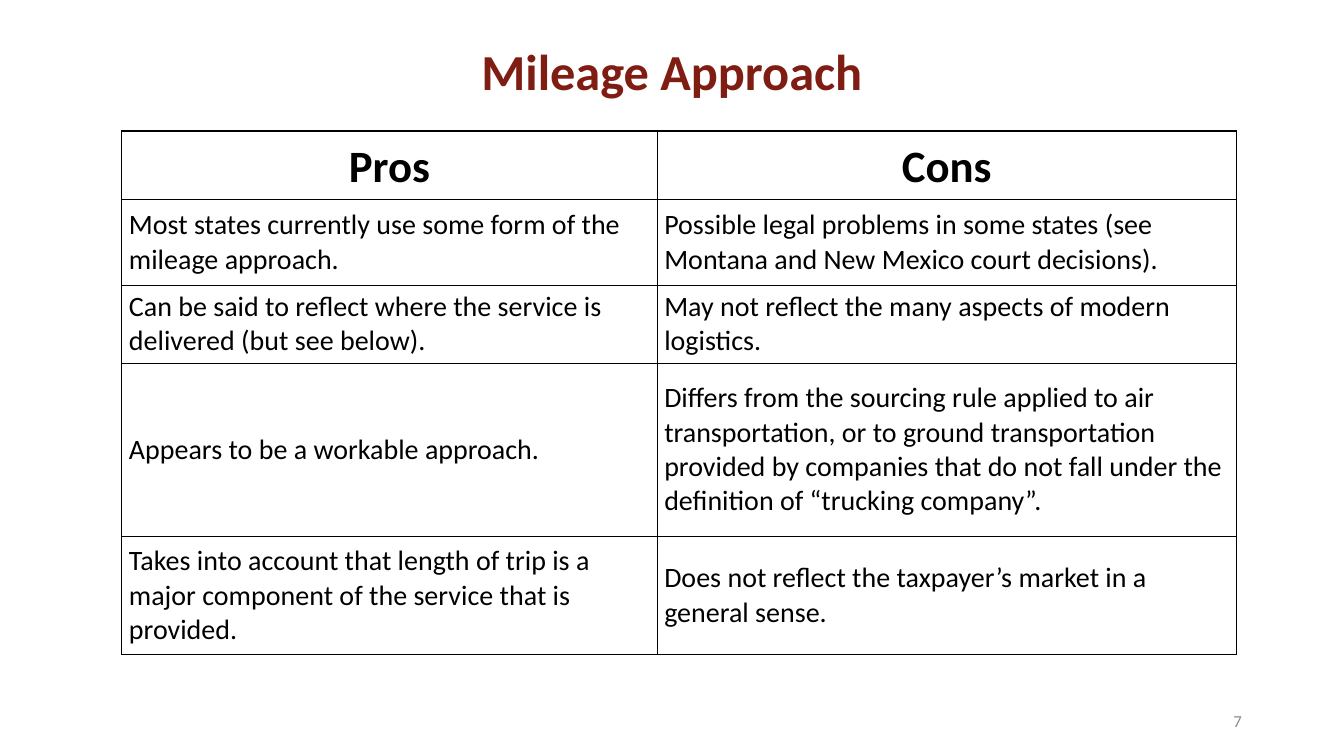
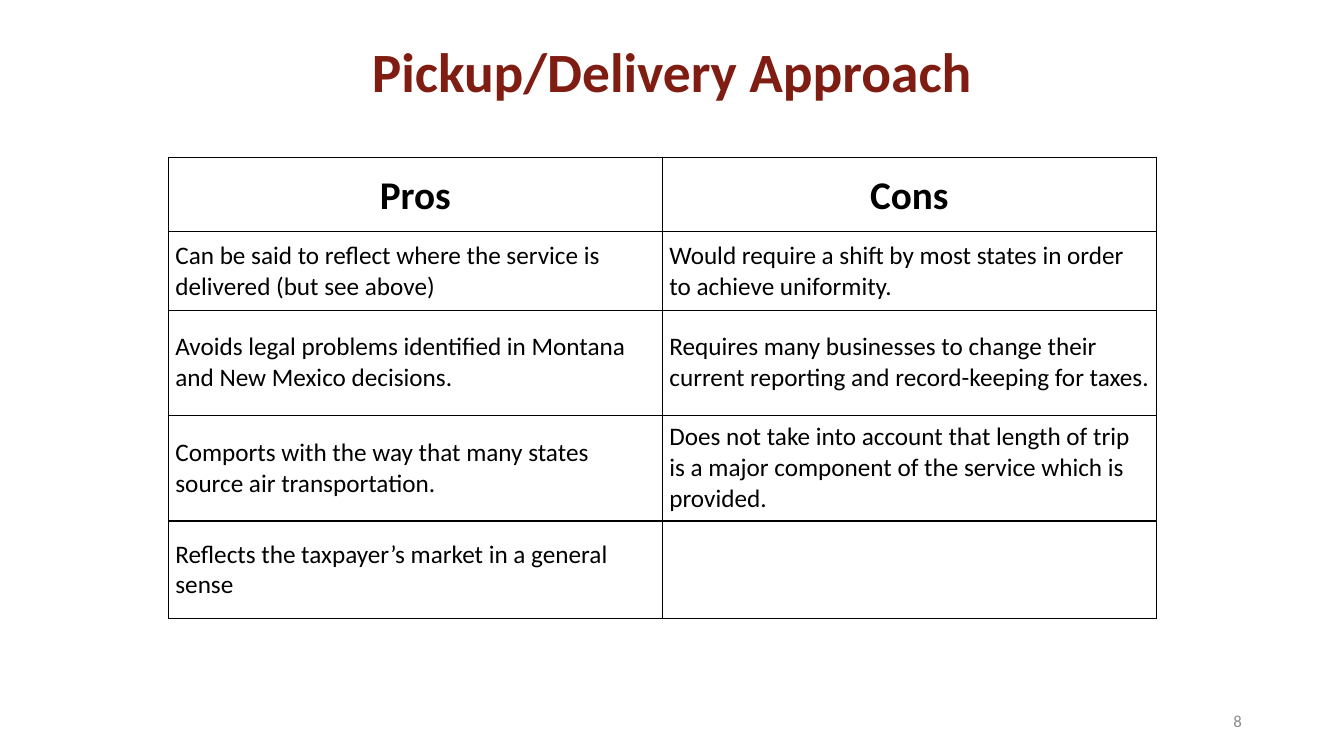
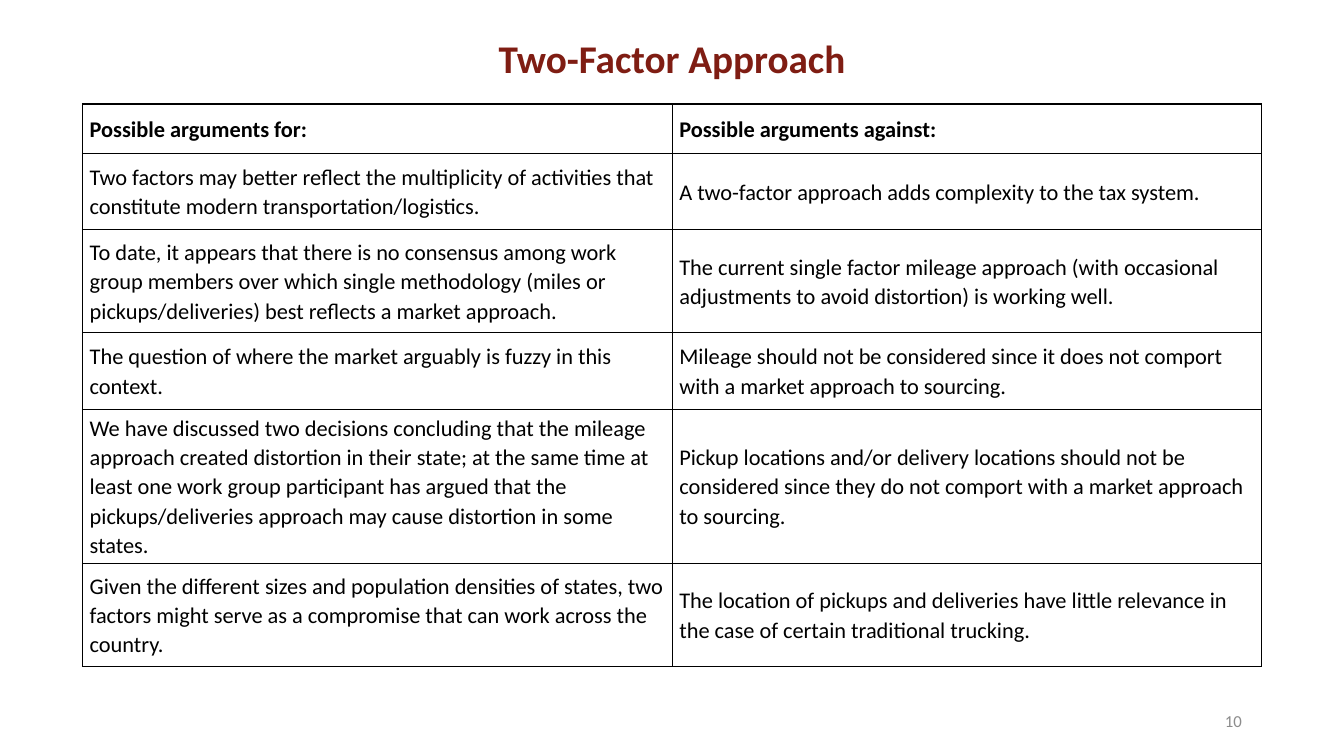
from dataclasses import dataclass

from lxml import etree
from pptx import Presentation
from pptx import util as u
from pptx.dml import color
from pptx.enum import text
from pptx.oxml import ns

Cm, Pt, Align = u.Cm, u.Pt, text.PP_ALIGN


@dataclass(frozen=True)
class Theme:
    font: str = "Calibri"
    brand: str = "7F1D13"
    ink: str = "000000"
    gray: str = "8C8C8C"
    small: float = 12
    lead: float = 1.07
    rule: float = 1
    wide: float = 33.87
    high: float = 19.05


class Deck:
    """Hold the theme, the file and the current slide."""

    def __init__(self, theme):
        self.theme = theme
        self.prs = Presentation()
        self.prs.slide_width = Cm(theme.wide)
        self.prs.slide_height = Cm(theme.high)

    def style(self, frame, size, tone, bold=False, align=Align.LEFT, lead=1.0):
        frame.word_wrap = True
        for para in frame.paragraphs:
            para.alignment = align
            para.line_spacing = lead
            for run in para.runs:
                font = run.font
                font.name, font.size, font.bold = self.theme.font, Pt(size), bold
                font.color.rgb = color.RGBColor.from_string(tone)

    def start(self, number):
        self.slide = self.prs.slides.add_slide(self.prs.slide_layouts[5])
        box = self.slide.shapes.add_textbox(Cm(23.93), Cm(17.65), Cm(7.62), Cm(1.02))
        frame = box.text_frame
        frame.text = str(number)
        frame.vertical_anchor = text.MSO_ANCHOR.MIDDLE
        self.style(frame, self.theme.small, self.theme.gray, align=Align.RIGHT)

    def title(self, words, size, top, high):
        head = self.slide.shapes.title
        head.left, head.top = Cm(0), Cm(top)
        head.width, head.height = Cm(self.theme.wide), Cm(high)
        frame = head.text_frame
        frame.text = words
        frame.auto_size = text.MSO_AUTO_SIZE.NONE
        frame.vertical_anchor = text.MSO_ANCHOR.MIDDLE
        self.style(frame, size, self.theme.brand, True, Align.CENTER, 0.9)

    def border(self, cell):
        props = cell._tc.get_or_add_tcPr()
        for side in "LRTB":
            line = etree.SubElement(props, ns.qn(f"a:ln{side}"), w=str(Pt(self.theme.rule)))
            fill = etree.SubElement(line, ns.qn("a:solidFill"))
            etree.SubElement(fill, ns.qn("a:srgbClr"), val=self.theme.ink)

    def table(self, left, top, cols, rows, cells, head, body, align, lead):
        frame = self.slide.shapes.add_table(
            len(rows), len(cols), Cm(left), Cm(top), Cm(sum(cols)), Cm(sum(rows)))
        grid = frame.table
        grid.first_row = grid.horz_banding = False
        for col, wide in zip(grid.columns, cols):
            col.width = Cm(wide)
        for row, high, line in zip(grid.rows, rows, cells):
            row.height = Cm(high)
            first = line is cells[0]
            for cell, words in zip(row.cells, line):
                cell.text = words
                cell.vertical_anchor = text.MSO_ANCHOR.MIDDLE
                cell.margin_left = cell.margin_right = Cm(0.18)
                cell.margin_top = cell.margin_bottom = 0
                self.border(cell)
                cell.fill.background()
                self.style(cell.text_frame, head if first else body, self.theme.ink, first,
                           align if first else Align.LEFT,
                           self.theme.lead if first else lead)


def main():
    theme = Theme()
    deck = Deck(theme)

    deck.start(7)
    deck.title("Mileage Approach", 36, 1.02, 1.68)
    deck.table(3.07, 3.3, [13.49, 14.6], [1.73, 2.16, 1.96, 4.37, 2.97], [
        ("Pros", "Cons"),
        ("Most states currently use some form of the mileage approach.",
         "Possible legal problems in some states (see Montana and New Mexico court decisions)."),
        ("Can be said to reflect where the service is delivered (but see below).",
         "May not reflect the many aspects of modern logistics."),
        ("Appears to be a workable approach.",
         "Differs from the sourcing rule applied to air transportation, or to ground "
         "transportation provided by companies that do not fall under the definition of "
         "“trucking company”."),
        ("Takes into account that length of trip is a major component of the service that "
         "is provided.",
         "Does not reflect the taxpayer’s market in a general sense."),
    ], 32, 20, Align.CENTER, 1.0)

    deck.start(8)
    deck.title("Pickup/Delivery Approach", 39.6, 1.02, 1.7)
    deck.table(4.24, 3.96, [12.45] * 2, [1.88, 1.98, 2.64, 2.67, 2.46], [
        ("Pros", "Cons"),
        ("Can be said to reflect where the service is delivered (but see above)",
         "Would require a shift by most states in order to achieve uniformity."),
        ("Avoids legal problems identified in Montana and New Mexico decisions.",
         "Requires many businesses to change their current reporting and record-keeping "
         "for taxes."),
        ("Comports with the way that many states source air transportation.",
         "Does not take into account that length of trip is a major component of the "
         "service which is provided."),
        ("Reflects the taxpayer’s market in a general sense", ""),
    ], 28, 18, Align.CENTER, 1.0)

    deck.start(10)
    deck.title("Two-Factor Approach", 28, 0.61, 1.85)
    deck.table(2.08, 2.62, [14.86] * 2, [1.24, 1.93, 2.59, 1.93, 3.89, 2.59], [
        ("Possible arguments for:", "Possible arguments against:"),
        ("Two factors may better reflect the multiplicity of activities that constitute "
         "modern transportation/logistics.",
         "A two-factor approach adds complexity to the tax system."),
        ("To date, it appears that there is no consensus among work group members over "
         "which single methodology (miles or pickups/deliveries) best reflects a market "
         "approach.",
         "The current single factor mileage approach (with occasional adjustments to avoid "
         "distortion) is working well."),
        ("The question of where the market arguably is fuzzy in this context.",
         "Mileage should not be considered since it does not comport with a market "
         "approach to sourcing."),
        ("We have discussed two decisions concluding that the mileage approach created "
         "distortion in their state; at the same time at least one work group participant "
         "has argued that the pickups/deliveries approach may cause distortion in some "
         "states.",
         "Pickup locations and/or delivery locations should not be considered since they "
         "do not comport with a market approach to sourcing."),
        ("Given the different sizes and population densities of states, two factors might "
         "serve as a compromise that can work across the country.",
         "The location of pickups and deliveries have little relevance in the case of "
         "certain traditional trucking."),
    ], 16, 16, Align.LEFT, theme.lead)

    deck.prs.save("out.pptx")


if __name__ == "__main__":
    main()
